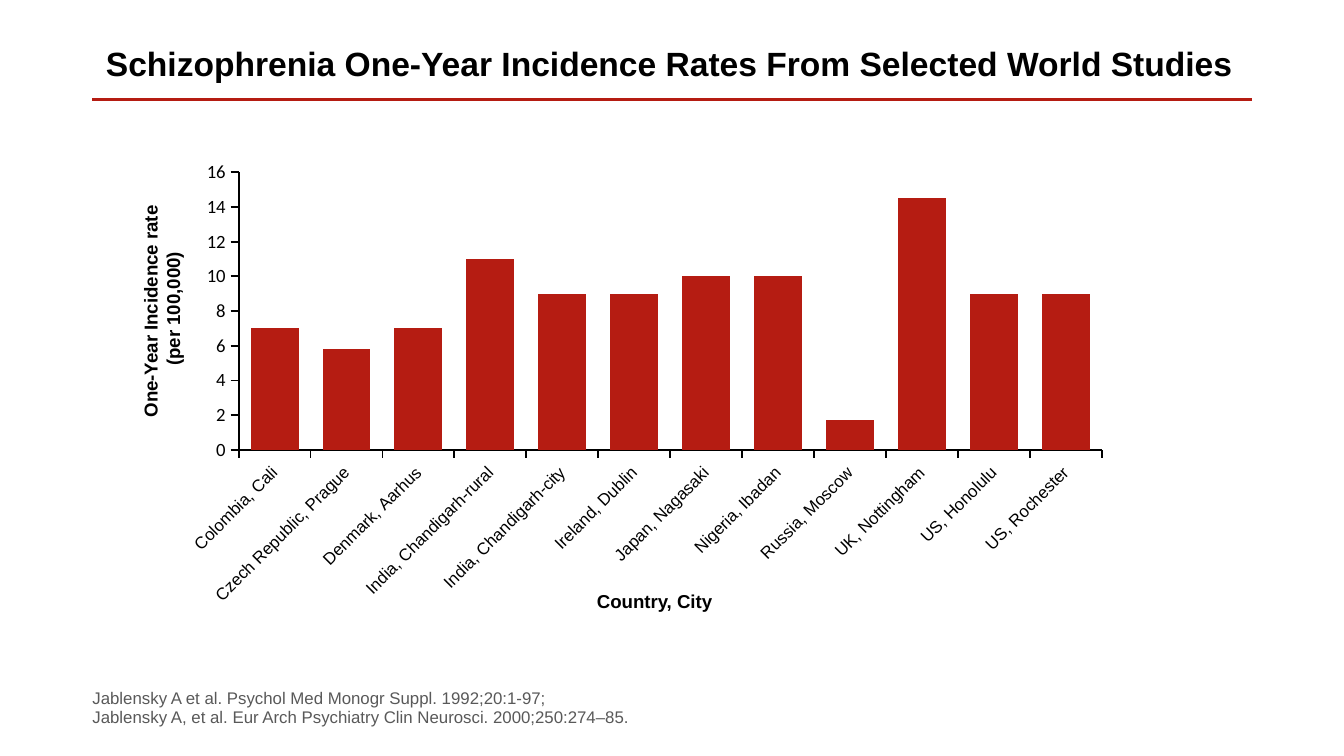
from lxml import etree
from pptx import Presentation
from pptx import util as u
from pptx.chart.data import CategoryChartData
from pptx.dml.color import RGBColor
from pptx.enum import chart as charts, shapes, text
from pptx.oxml import parse_xml
from pptx.oxml.ns import nsdecls, qn

COLORS = {"accent": "B51C12", "ink": "000000", "muted": "595959"}
WIDTH = u.Inches(10)
HEIGHT = WIDTH * 9 // 16
COLUMN, ROW = WIDTH / 100, HEIGHT / 100

INCIDENCE = {
    "Colombia, Cali": 7,
    "Czech Republic, Prague": 5.8,
    "Denmark, Aarhus": 7,
    "India, Chandigarh-rural": 11,
    "India, Chandigarh-city": 9,
    "Ireland, Dublin": 9,
    "Japan, Nagasaki": 10,
    "Nigeria, Ibadan": 10,
    "Russia, Moscow": 1.7,
    "UK, Nottingham": 14.5,
    "US, Honolulu": 9,
    "US, Rochester": 9,
}
PLOT_AREA = {"x": 0.086, "y": 0.055, "w": 0.897, "h": 0.585}
AXIS_TITLE = {"size": u.Pt(10), "bold": True}


def color(name):
    """Return the named palette colour."""
    return RGBColor.from_string(COLORS[name])


def grid_box(left, top, width, height):
    """Convert columns and rows to slide lengths."""
    return [round(n * unit) for n, unit in zip((left, top, width, height), (COLUMN, ROW) * 2)]


def apply_values(target, values):
    """Set each named attribute on the target."""
    for name, value in values.items():
        setattr(target, name, value)


def style_font(font, size, name="Arial", ink="ink", bold=False):
    """Give a font its face, size, weight and colour."""
    apply_values(font, {"size": size, "name": name, "bold": bold})
    font.color.rgb = color(ink)


def write_text(shape, wording, frame_format, paragraph_format, font_format):
    """Write one formatted paragraph into a shape."""
    frame = shape.text_frame
    apply_values(frame, frame_format)
    paragraph = frame.paragraphs[0]
    paragraph.text = wording
    apply_values(paragraph, paragraph_format)
    for run in paragraph.runs:
        style_font(run.font, **font_format)


def add_header(slide, left, top, width, height):
    """Place the title and the rule beneath it."""
    title = slide.shapes.title
    apply_values(title, dict(zip(("left", "top", "width", "height"),
                                 grid_box(left, top, width, height))))
    write_text(title, "Schizophrenia One-Year Incidence Rates From Selected World Studies",
               {"auto_size": text.MSO_AUTO_SIZE.NONE, "word_wrap": True,
                "vertical_anchor": text.MSO_ANCHOR.TOP},
               {"alignment": text.PP_ALIGN.LEFT, "line_spacing": 0.9},
               {"size": u.Pt(18), "bold": True})
    x, y, length, _ = grid_box(left, top + height + 0.36, width + 0.2, 0)
    rule = slide.shapes.add_connector(shapes.MSO_CONNECTOR.STRAIGHT, x, y, x + length, y)
    rule.line.color.rgb = color("accent")
    rule.line.width = u.Pt(1.5)
    etree.SubElement(rule._element.spPr, qn("a:effectLst"))


def add_axis_title(slide, wording, box, rotation=0, wrap=True):
    """Place a bold centred axis title."""
    label = slide.shapes.add_textbox(*grid_box(*box))
    label.rotation = rotation
    write_text(label, wording,
               {"word_wrap": wrap, "auto_size": text.MSO_AUTO_SIZE.SHAPE_TO_FIT_TEXT},
               {"alignment": text.PP_ALIGN.CENTER}, AXIS_TITLE)


def style_axis(axis, font_format):
    """Give an axis its line, ticks and label font."""
    apply_values(axis, {"has_major_gridlines": False, "has_title": False,
                        "major_tick_mark": charts.XL_TICK_MARK.OUTSIDE,
                        "minor_tick_mark": charts.XL_TICK_MARK.NONE})
    axis.format.line.color.rgb = color("ink")
    axis.format.line.width = u.Pt(1)
    style_font(axis.tick_labels.font, **font_format)


def set_plot_area(chart):
    """Fix the inner plot area as shares of the chart."""
    plot_area = chart._chartSpace.chart.plotArea
    for layout in plot_area.findall(qn("c:layout")):
        plot_area.remove(layout)
    modes = '<c:layoutTarget val="inner"/><c:xMode val="edge"/><c:yMode val="edge"/>'
    sizes = "".join(f'<c:{key} val="{share}"/>' for key, share in PLOT_AREA.items())
    plot_area.insert(0, parse_xml(
        f'<c:layout {nsdecls("c")}><c:manualLayout>{modes}{sizes}</c:manualLayout></c:layout>'))


def add_incidence_chart(slide, left, top, width, height):
    """Place the column chart and its two axis titles."""
    data = CategoryChartData()
    data.categories = list(INCIDENCE)
    data.add_series("Series 1", list(INCIDENCE.values()))
    chart = slide.shapes.add_chart(charts.XL_CHART_TYPE.COLUMN_CLUSTERED,
                                   *grid_box(left, top, width, height), data).chart
    apply_values(chart, {"has_legend": False, "has_title": False})
    style_font(chart.font, u.Pt(10), "Calibri")
    set_plot_area(chart)

    plot = chart.plots[0]
    apply_values(plot, {"gap_width": 50, "vary_by_categories": False})
    fill = plot.series[0].format.fill
    fill.solid()
    fill.fore_color.rgb = color("accent")

    style_axis(chart.category_axis, {"size": u.Pt(9)})
    style_axis(chart.value_axis, {"size": u.Pt(10), "name": "Calibri"})
    apply_values(chart.value_axis, {"minimum_scale": 0, "maximum_scale": 16, "major_unit": 2})
    label_body = chart.category_axis._element.find(qn("c:txPr")).find(qn("a:bodyPr"))
    label_body.set("rot", "-2700000")

    add_axis_title(slide, "One-Year Incidence rate \n(per 100,000)",
                   (left - 9.8, top + 17.6, 20.5, 7.82), rotation=270)
    add_axis_title(slide, "Country, City", (left + 31.7, top + 57.8, 10.8, 4.8), wrap=False)


def add_references(slide, left, top, width, height):
    """Place the citations, growing upward from the box's bottom."""
    references = slide.shapes.add_textbox(*grid_box(left, top, width, height))
    margins = {f"margin_{side}": 0 for side in ("left", "top", "right", "bottom")}
    write_text(references,
               "Jablensky A et al. Psychol Med Monogr Suppl. 1992;20:1-97; \n"
               "Jablensky A, et al. Eur Arch Psychiatry Clin Neurosci. 2000;250:274‒85.",
               {**margins, "word_wrap": True, "vertical_anchor": text.MSO_ANCHOR.BOTTOM,
                "auto_size": text.MSO_AUTO_SIZE.SHAPE_TO_FIT_TEXT},
               {"line_spacing": u.Pt(10.5)}, {"size": u.Pt(9), "ink": "muted"})


def main():
    """Build and save the presentation."""
    presentation = Presentation()
    apply_values(presentation, {"slide_width": WIDTH, "slide_height": HEIGHT})
    slide = presentation.slides.add_slide(presentation.slide_layouts[5])
    add_header(slide, 6.88, 5.33, 86.04, 7.47)
    add_incidence_chart(slide, 11.6, 19.35, 71.6, 62.76)
    add_references(slide, 6.88, 93.55, 46, 2.67)
    presentation.save("out.pptx")


if __name__ == "__main__":
    main()
